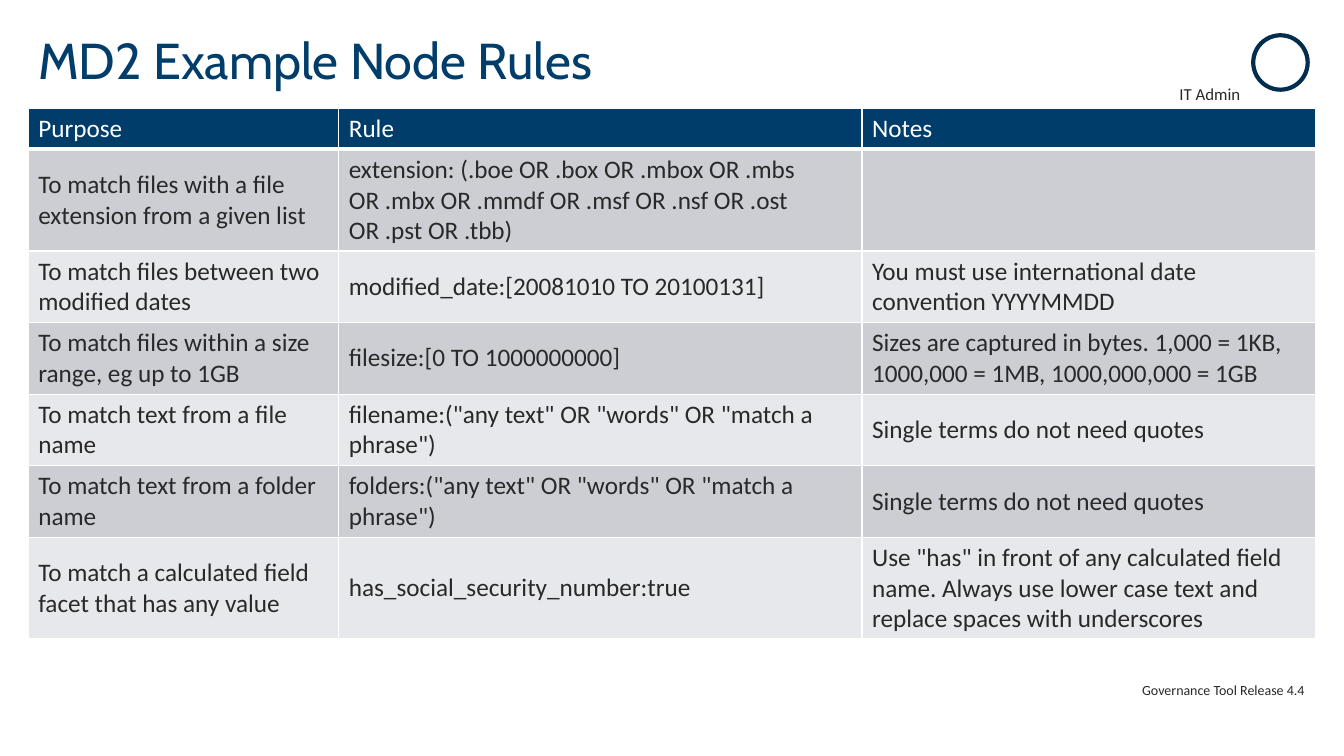
"""Build the slide that lists example node rules in a table."""
from lxml.etree import SubElement
from pptx import Presentation
from pptx.dml.color import RGBColor
from pptx.enum.shapes import MSO_SHAPE
from pptx.enum.text import MSO_ANCHOR, PP_ALIGN
from pptx.oxml.ns import qn
from pptx.util import Inches, Pt

COLORS = {
    "title": "013D6B",
    "ring": "012D4F",
    "text": "292929",
    "white": "FFFFFF",
    "dark_band": "CCCED4",
    "light_band": "E7E8EB",
}
RULES = [
    ("Purpose", "Rule", "Notes"),
    ("To match files with a file extension from a given list",
     "extension: (.boe OR .box OR .mbox OR .mbs OR .mbx OR .mmdf OR .msf OR .nsf "
     "OR .ost OR .pst OR .tbb)",
     ""),
    ("To match files between two modified dates",
     "modified_date:[20081010 TO 20100131]",
     "You must use international date convention YYYYMMDD"),
    ("To match files within a size range, eg up to 1GB",
     "filesize:[0 TO 1000000000]",
     "Sizes are captured in bytes. 1,000 = 1KB, 1000,000 = 1MB, 1000,000,000 = 1GB"),
    ("To match text from a file name",
     'filename:("any text" OR "words" OR "match a phrase")',
     "Single terms do not need quotes"),
    ("To match text from a folder name",
     'folders:("any text" OR "words" OR "match a phrase")',
     "Single terms do not need quotes"),
    ("To match a calculated field facet that has any value",
     "has_social_security_number:true",
     'Use "has" in front of any calculated field name. Always use lower case text '
     "and replace spaces with underscores"),
]
COLUMN_WIDTHS = [3.08, 5.19, 4.5]
ROW_HEIGHTS = [0.4, 1.01, 0.71, 0.71, 0.71, 0.71, 1.01]


def write(text_frame, text, size, color, font_name="Calibri"):
    text_frame.text = text
    paragraph = text_frame.paragraphs[0]
    paragraph.font.size = Pt(size)
    for run in paragraph.runs:
        run.font.size = Pt(size)
        run.font.name = font_name
        run.font.color.rgb = RGBColor.from_string(COLORS[color])
    return paragraph


def add_border(cell, side, width):
    properties = cell._tc.get_or_add_tcPr()
    line = SubElement(properties, qn(f"a:{side}"), w=str(Pt(width)))
    fill = SubElement(line, qn("a:solidFill"))
    SubElement(fill, qn("a:srgbClr"), val=COLORS["white"])


presentation = Presentation()
presentation.slide_width = Inches(13.33)
presentation.slide_height = Inches(7.5)
slide = presentation.slides.add_slide(presentation.slide_layouts[6])

role = slide.shapes.add_textbox(Inches(11.38), Inches(0.78), Inches(1.24), Inches(0.3))
role.text_frame.word_wrap = True
write(role.text_frame, "IT Admin", 12, "text").alignment = PP_ALIGN.CENTER

ring = slide.shapes.add_shape(
    MSO_SHAPE.OVAL, Inches(12.43), Inches(0.35), Inches(0.54), Inches(0.54))
ring.shadow.inherit = False
ring.fill.background()
ring.line.color.rgb = RGBColor.from_string(COLORS["ring"])
ring.line.width = Pt(3)

release = slide.shapes.add_textbox(Inches(11.23), Inches(6.71), Inches(1.85), Inches(0.27))
release.text_frame.word_wrap = False
write(release.text_frame, "Governance Tool Release 4.4", 10, "text")

title = slide.shapes.add_textbox(Inches(0.28), Inches(0.28), Inches(10.55), Inches(0.69))
title.text_frame.word_wrap = True
title.text_frame.vertical_anchor = MSO_ANCHOR.MIDDLE
write(title.text_frame, "MD2 Example Node Rules", 36, "title", "Cabin").line_spacing = 0.9

table = slide.shapes.add_table(
    len(RULES), len(COLUMN_WIDTHS), Inches(0.28), Inches(1.08),
    Inches(sum(COLUMN_WIDTHS)), Inches(sum(ROW_HEIGHTS))).table
for column, width in zip(table.columns, COLUMN_WIDTHS):
    column.width = Inches(width)
for row_index, (row, height) in enumerate(zip(table.rows, ROW_HEIGHTS)):
    row.height = Inches(height)
    is_header = row_index == 0
    band = "title" if is_header else "dark_band" if row_index % 2 else "light_band"
    for cell, text in zip(row.cells, RULES[row_index]):
        write(cell.text_frame, text, 18, "white" if is_header else "text")
        cell.vertical_anchor = MSO_ANCHOR.TOP if is_header else MSO_ANCHOR.MIDDLE
        for side in ("lnL", "lnR", "lnT", "lnB"):
            thick = (is_header and side == "lnB") or (row_index == 1 and side == "lnT")
            add_border(cell, side, 3 if thick else 1)
        cell.fill.solid()
        cell.fill.fore_color.rgb = RGBColor.from_string(COLORS[band])

presentation.save("out.pptx")
